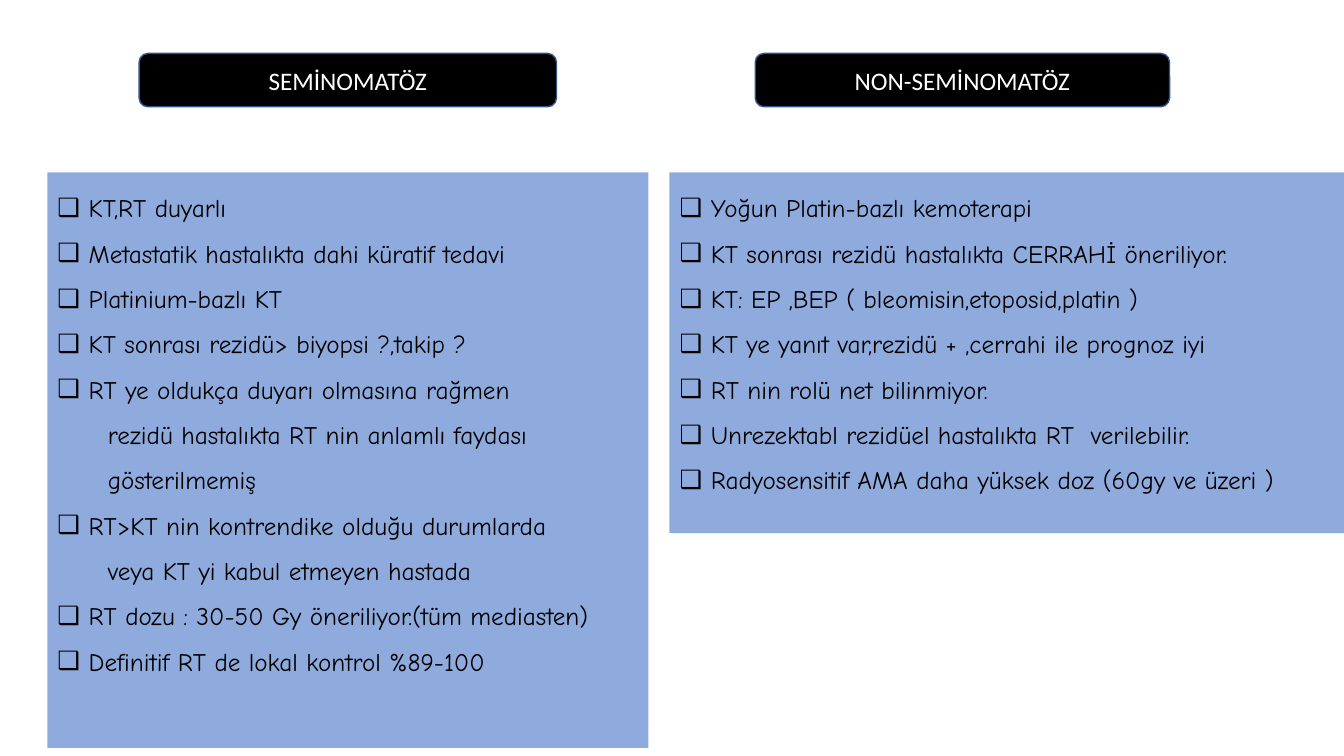
import pptx
import pptx.util
import pptx.dml.color
import pptx.enum.shapes
import pptx.enum.text
import pptx.oxml.ns
import lxml.etree

Inches, Pt = pptx.util.Inches, pptx.util.Pt

COLUMNS = [
    {
        "heading": "SEMİNOMATÖZ",
        "heading_box": (1.38, 0.53, 4.14, 0.53),
        "list_box": (0.47, 1.71, 5.96, 5.71),
        "items": [
            ["KT,RT duyarlı"],
            ["Metastatik hastalıkta dahi küratif tedavi"],
            ["Platinium-bazlı KT"],
            ["KT sonrası rezidü> biyopsi ?,takip ?"],
            ["RT ye oldukça duyarı olmasına rağmen",
             "rezidü hastalıkta RT nin anlamlı faydası",
             "gösterilmemiş"],
            ["RT>KT nin kontrendike olduğu durumlarda",
             "veya KT yi kabul etmeyen hastada"],
            ["RT dozu : 30-50 Gy öneriliyor.(tüm mediasten)"],
            ["Definitif RT de lokal kontrol %89-100"],
        ],
    },
    {
        "heading": "NON-SEMİNOMATÖZ",
        "heading_box": (7.49, 0.53, 4.11, 0.53),
        "list_box": (6.64, 1.71, 6.69, 3.58),
        "items": [
            ["Yoğun Platin-bazlı kemoterapi"],
            ["KT sonrası rezidü hastalıkta CERRAHİ öneriliyor."],
            ["KT: EP ,BEP ( bleomisin,etoposid,platin )"],
            ["KT ye yanıt var,rezidü + ,cerrahi ile prognoz iyi"],
            ["RT nin rolü net bilinmiyor."],
            ["Unrezektabl rezidüel hastalıkta RT  verilebilir."],
            ["Radyosensitif AMA daha yüksek doz (60gy ve üzeri )"],
        ],
    },
]

ALIGN = pptx.enum.text.PP_ALIGN
ANCHOR = pptx.enum.text.MSO_ANCHOR
HEADING_FONT = {"name": "Calibri", "size": Pt(18)}
LIST_FONT = {"name": "Comic Neue", "size": Pt(18)}
HEADING_PARA = {"alignment": ALIGN.CENTER}
LIST_PARA = {"alignment": ALIGN.LEFT, "line_spacing": 1.5,
             "space_before": Pt(0), "space_after": Pt(0)}
HEADING_FRAME = {"word_wrap": True, "vertical_anchor": ANCHOR.MIDDLE}
LIST_FRAME = {"word_wrap": True, "vertical_anchor": ANCHOR.TOP,
              "auto_size": pptx.enum.text.MSO_AUTO_SIZE.NONE}
BULLET_INDENT = (0.31, -0.31)
CONTINUATION_INDENT = (0.5, 0)


def apply(target, values):
    for name, value in values.items():
        setattr(target, name, value)


def paint(color_format, color):
    color_format.rgb = pptx.dml.color.RGBColor.from_string(color)


def fill(sp, color):
    sp.fill.solid()
    paint(sp.fill.fore_color, color)


def write(p, text, para, font, color):
    apply(p, para)
    r = p.add_run()
    r.text = text
    apply(r.font, font)
    paint(r.font.color, color)


def indent(p, bullet):
    left, first = BULLET_INDENT if bullet else CONTINUATION_INDENT
    pPr = p._p.get_or_add_pPr()
    pPr.set("marL", str(Inches(left)))
    pPr.set("indent", str(Inches(first)))
    tag = "a:buChar" if bullet else "a:buNone"
    bu = lxml.etree.SubElement(pPr, pptx.oxml.ns.qn(tag))
    if bullet:
        bu.set("char", "❑")


def add_heading(s, text, box):
    kind = pptx.enum.shapes.MSO_SHAPE.ROUNDED_RECTANGLE
    sp = s.shapes.add_shape(kind, *map(Inches, box))
    sp.shadow.inherit = False
    fill(sp, "000000")
    paint(sp.line.color, "325491")
    sp.line.width = Pt(1)
    tf = sp.text_frame
    apply(tf, HEADING_FRAME)
    write(tf.paragraphs[0], text, HEADING_PARA, HEADING_FONT, "FFFFFF")


def fill_list(sp, items, box):
    apply(sp, dict(zip(("left", "top", "width", "height"), map(Inches, box))))
    fill(sp, "8FAADC")
    tf = sp.text_frame
    apply(tf, LIST_FRAME)
    lines = [(text, i == 0) for item in items for i, text in enumerate(item)]
    for n, (text, bullet) in enumerate(lines):
        p = tf.add_paragraph() if n else tf.paragraphs[0]
        write(p, text, LIST_PARA, LIST_FONT, "000000")
        indent(p, bullet)


def main():
    prs = pptx.Presentation()
    prs.slide_width, prs.slide_height = Inches(13.33), Inches(7.5)
    s = prs.slides.add_slide(prs.slide_layouts.get_by_name("Two Content"))
    title, *bodies = s.placeholders
    title.element.getparent().remove(title.element)
    for column, body in zip(COLUMNS, bodies):
        add_heading(s, column["heading"], column["heading_box"])
        fill_list(body, column["items"], column["list_box"])
    prs.save("out.pptx")


if __name__ == "__main__":
    main()
